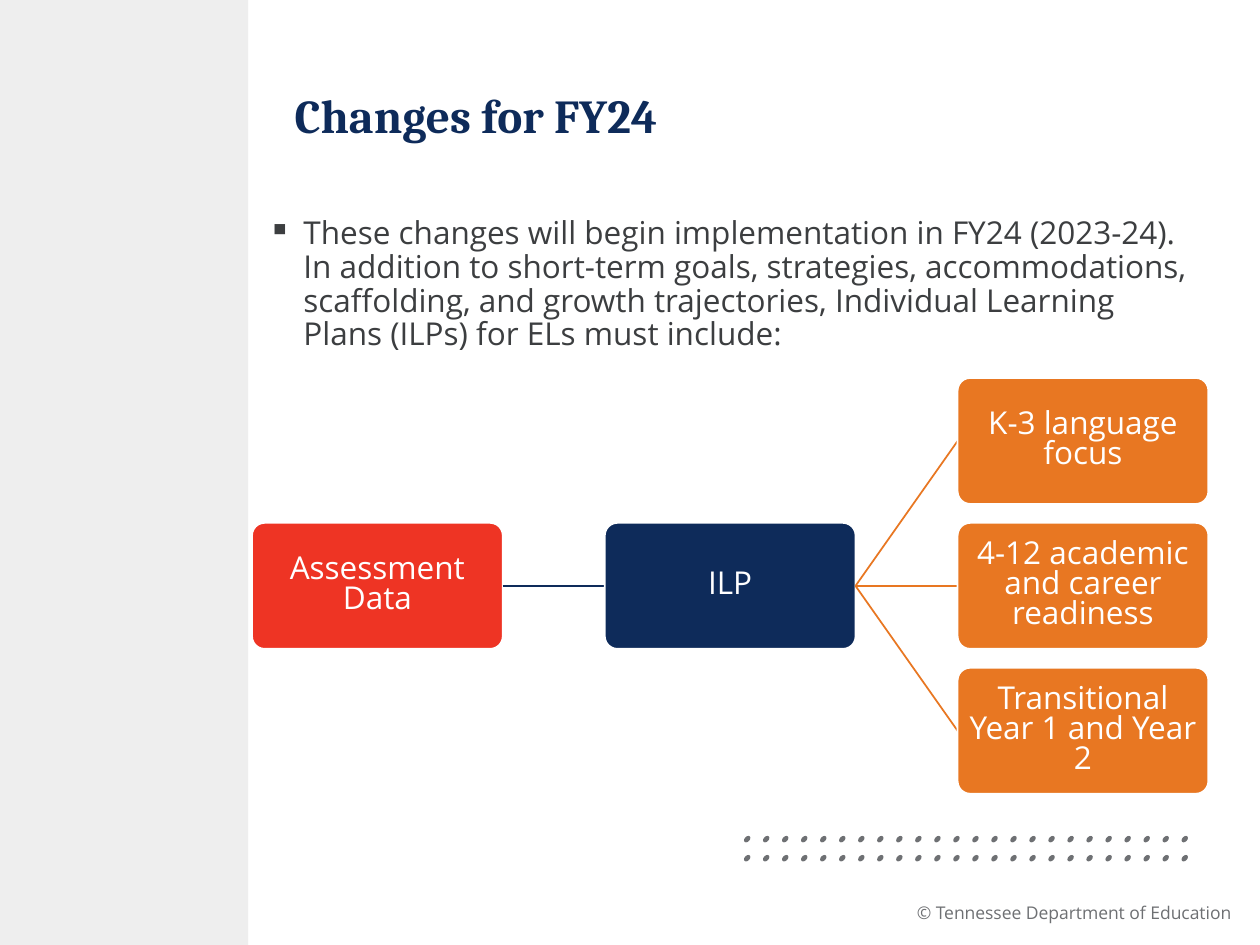
import pptx
import pptx.util
import pptx.dml.color
import pptx.enum.shapes
import pptx.enum.text
import pptx.oxml.ns
import lxml.etree

Inches = pptx.util.Inches
Pt = pptx.util.Pt
SHAPES = pptx.enum.shapes.MSO_SHAPE
ALIGN = pptx.enum.text.PP_ALIGN
ANCHOR = pptx.enum.text.MSO_ANCHOR

COLORS = {
    "white": "FFFFFF",
    "panel": "EEEEEE",
    "gray": "6E7073",
    "text": "3C3E40",
    "navy": "0E2B5A",
    "red": "EE3424",
    "orange": "E87722",
}

TITLE = "Changes for FY24"
BODY = (
    "These changes will begin implementation in FY24 (2023-24). In addition to "
    "short-term goals, strategies, accommodations, scaffolding, and growth "
    "trajectories, Individual Learning Plans (ILPs) for ELs must include:"
)
FOOTER = "© Tennessee Department of Education"

COLUMNS = [
    ("red", ["Assessment Data"]),
    ("navy", ["ILP"]),
    ("orange", [
        "K-3 language focus",
        "4-12 academic and career readiness",
        "Transitional Year 1 and Year 2",
    ]),
]

BOX_WIDTH, BOX_HEIGHT = 1.99, 1
COLUMN_LEFT, COLUMN_STEP = 2, 2.8
CENTER_Y, ROW_STEP = 4.65, 1.15

DOT_LEFT, DOT_TOP, DOT_STEP = 5.9, 6.64, 0.151
DOT_COLUMNS, DOT_ROWS = 24, 2


def rgb(name):
    return pptx.dml.color.RGBColor.from_string(COLORS[name])


def add_shape(slide, kind, left, top, width, height, fill):
    shape = slide.shapes.add_shape(
        kind, Inches(left), Inches(top), Inches(width), Inches(height))
    shape.shadow.inherit = False
    shape.fill.solid()
    shape.fill.fore_color.rgb = rgb(fill)
    shape.line.fill.background()
    return shape


def format_text(paragraph, size, color, font="Open Sans", bold=False):
    for run in paragraph.runs:
        run.font.size = Pt(size)
        run.font.name = font
        run.font.bold = bold
        run.font.color.rgb = rgb(color)


def add_text(slide, text, left, top, width, height):
    frame = slide.shapes.add_textbox(
        Inches(left), Inches(top), Inches(width), Inches(height)).text_frame
    frame.word_wrap = True
    frame.text = text
    return frame


def add_bullet(paragraph):
    properties = paragraph._p.get_or_add_pPr()
    properties.set("marL", str(Inches(0.28)))
    properties.set("indent", str(Inches(-0.28)))
    bullet = lxml.etree.SubElement(properties, pptx.oxml.ns.qn("a:buChar"))
    bullet.set("char", "▪")


def add_box(slide, text, left, center, fill):
    box = add_shape(slide, SHAPES.ROUNDED_RECTANGLE, left,
                    center - BOX_HEIGHT / 2, BOX_WIDTH, BOX_HEIGHT, fill)
    box.adjustments[0] = 0.1
    box.line.color.rgb = rgb("white")
    box.line.width = Pt(1)
    frame = box.text_frame
    frame.word_wrap = True
    frame.vertical_anchor = ANCHOR.MIDDLE
    frame.margin_left = frame.margin_right = Inches(0.04)
    frame.margin_top = frame.margin_bottom = Inches(0.04)
    frame.text = text
    paragraph = frame.paragraphs[0]
    paragraph.alignment = ALIGN.CENTER
    paragraph.line_spacing = 0.79
    format_text(paragraph, 18, "white")


def add_link(slide, start, end, color):
    link = slide.shapes.add_connector(
        pptx.enum.shapes.MSO_CONNECTOR.STRAIGHT,
        *(Inches(value) for value in start + end))
    link.line.color.rgb = rgb(color)
    link.line.width = Pt(1)
    lxml.etree.SubElement(
        link._element.spPr, pptx.oxml.ns.qn("a:effectLst"))


def add_diagram(slide):
    for column, (color, labels) in enumerate(COLUMNS):
        left = COLUMN_LEFT + column * COLUMN_STEP
        for row, label in enumerate(labels):
            center = CENTER_Y + (row - (len(labels) - 1) / 2) * ROW_STEP
            if column:
                start = (left - COLUMN_STEP + BOX_WIDTH, CENTER_Y)
                add_link(slide, start, (left, center), color)
            add_box(slide, label, left, center, color)


def add_dots(slide):
    for row in range(DOT_ROWS):
        for column in range(DOT_COLUMNS):
            dot = add_shape(slide, SHAPES.OVAL, DOT_LEFT + column * DOT_STEP,
                            DOT_TOP + row * DOT_STEP, 0.06, 0.04, "gray")
            dot.rotation = 314.4


def main():
    presentation = pptx.Presentation()
    presentation.slide_width = Inches(10)
    presentation.slide_height = Inches(7.5)
    slide = presentation.slides.add_slide(presentation.slide_layouts[6])

    footer = add_text(slide, FOOTER, 6.77, 7.13, 3.1, 0.25).paragraphs[0]
    footer.alignment = ALIGN.RIGHT
    footer.line_spacing = 0.9
    format_text(footer, 10, "gray")

    add_shape(slide, SHAPES.RECTANGLE, 0, 0, 1.97, 7.5, "panel")
    add_dots(slide)

    title = add_text(slide, TITLE, 2.24, 0.25, 7.37, 1.32)
    title.vertical_anchor = ANCHOR.MIDDLE
    format_text(title.paragraphs[0], 27, "navy", "Cambria", True)

    body = add_text(slide, BODY, 2.03, 1.68, 7.58, 1.32).paragraphs[0]
    add_bullet(body)
    body.line_spacing = 0.89
    format_text(body, 18, "text")

    add_diagram(slide)
    presentation.save("out.pptx")


if __name__ == "__main__":
    main()
